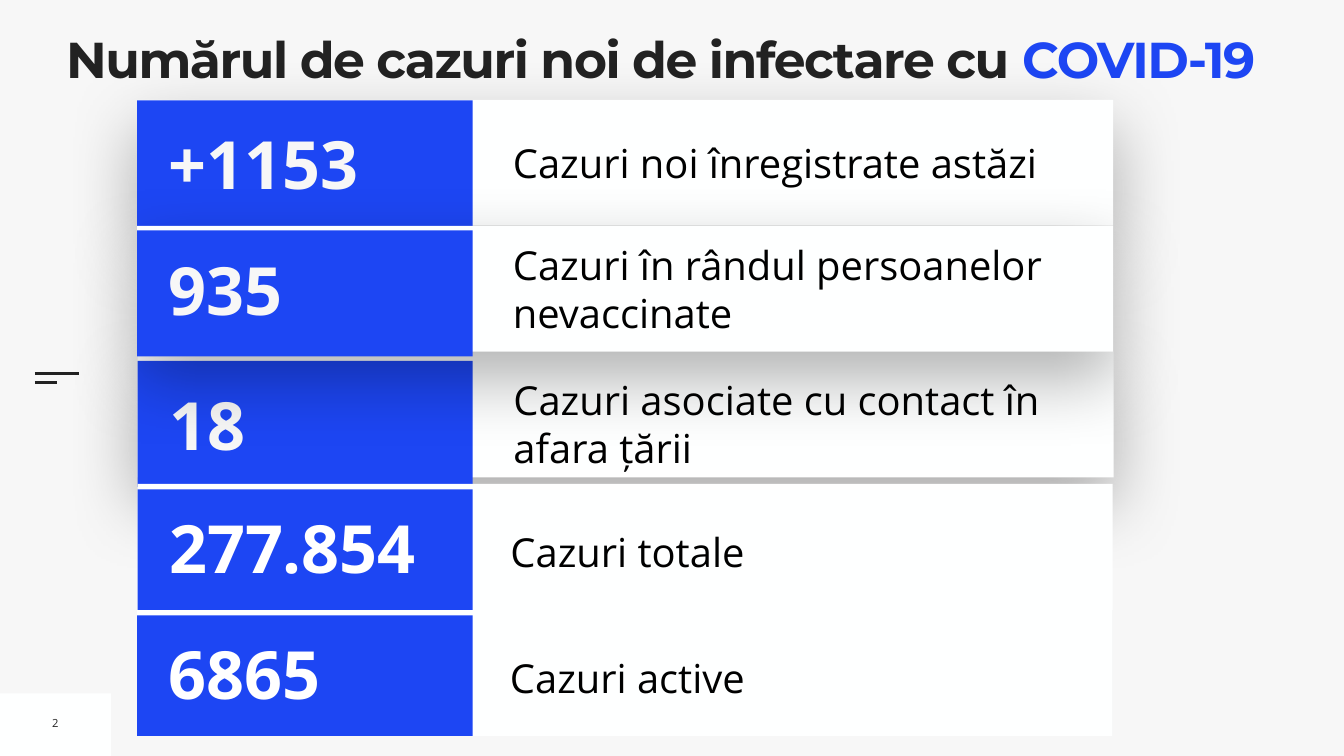
from lxml import etree
from pptx import Presentation, util as u
from pptx.dml.color import RGBColor
from pptx.enum import shapes, text
from pptx.oxml.ns import qn

PX = 9144  # EMU per px, 100 px to the inch
BLUE = RGBColor(0x1D, 0x46, 0xF3)
INK = RGBColor(0x22, 0x22, 0x22)
BLACK = RGBColor(0, 0, 0)
CARD = RGBColor(0xFE, 0xFF, 0xFF)
WHITE = RGBColor(0xFF, 0xFF, 0xFF)
PALE = RGBColor(0xF7, 0xF7, 0xF7)


def px(*lengths):
    return [n * PX for n in lengths]


def add_rect(parent, box, color):
    sp = parent.add_shape(shapes.MSO_SHAPE.RECTANGLE, *px(*box))
    sp.fill.solid()
    sp.fill.fore_color.rgb = color
    sp.line.fill.background()
    sp.shadow.inherit = False
    return sp


def add_shadow(sp):
    """Wide soft shadow falling straight down."""
    effects = sp._element.spPr.find(qn("a:effectLst"))
    shadow = etree.SubElement(effects, qn("a:outerShdw"), blurRad=str(u.Pt(100)),
                              dist=str(u.Pt(40)), dir="5400000", rotWithShape="0")
    color = etree.SubElement(shadow, qn("a:srgbClr"), val="000000")
    etree.SubElement(color, qn("a:alpha"), val="30000")


def add_text(parent, box, words, size, color, bold=False, inset=10, wrap=True):
    tf = parent.add_textbox(*px(*box)).text_frame
    tf.word_wrap = wrap
    tf.vertical_anchor = text.MSO_ANCHOR.MIDDLE
    tf.margin_left = tf.margin_right = tf.margin_top = tf.margin_bottom = inset * PX
    p = tf.paragraphs[0]
    p.text = words
    p.font.name, p.font.size, p.font.bold = "Open Sans", u.Pt(size), bold
    p.font.color.rgb = color
    return p


def add_line(parent, x, y, width):
    line = parent.add_connector(shapes.MSO_CONNECTOR.STRAIGHT, *px(x, y, x + width, y))
    line.line.color.rgb = INK
    line.line.width = u.Pt(3)
    etree.SubElement(line._element.spPr, qn("a:effectLst"))


def add_title(slide, box):
    title = slide.shapes.title
    title.left, title.top, title.width, title.height = px(*box)
    tf = title.text_frame
    tf.auto_size = text.MSO_AUTO_SIZE.NONE
    tf.vertical_anchor = text.MSO_ANCHOR.TOP
    tf.margin_left = tf.margin_right = tf.margin_top = tf.margin_bottom = 0
    p = tf.paragraphs[0]
    p.alignment = text.PP_ALIGN.LEFT
    p.line_spacing = 0.8
    for words, color in (("Numărul de cazuri noi de infectare cu ", INK), ("COVID-19", BLUE)):
        r = p.add_run()
        r.text = words
        r.font.name, r.font.size, r.font.bold = "Montserrat", u.Pt(72), True
        r.font.color.rgb = color
        r._r.get_or_add_rPr().set("spc", "-200")


def add_margin(slide):
    """Page number and the short rules at the left edge."""
    add_rect(slide.shapes, (0, 1376, 220, 124), CARD)
    add_line(slide.shapes, 69, 741, 88)
    add_line(slide.shapes, 69, 759, 44)
    p = add_text(slide.shapes, (93, 1409, 34, 51), "2", 16, INK, wrap=False)
    p.alignment = text.PP_ALIGN.CENTER


def add_case_row(slide, box, number, label, blue_drop, blue_height, number_drop,
                 label_drop, label_height):
    """White card with a blue number cell; drops are measured from the card top."""
    x, y, width, height = box
    row = slide.shapes.add_group_shape().shapes
    card = add_rect(row, box, CARD)
    is_total = blue_height < height
    if is_total:
        p = add_text(row, (x + 740, y + label_drop, 1158, label_height), label, 57, BLACK, inset=0)
        p.line_spacing = 1.3
        p.space_before = u.Pt(20)
    else:
        add_shadow(card)
        add_text(row, (x + 736, y + label_drop, 1176, label_height), label, 57, BLACK)
    add_rect(row, (x, y + blue_drop, 938 - x, blue_height), BLUE)
    add_text(row, (x + 53, y + number_drop, 603, 180), number, 95,
             WHITE if is_total else PALE, bold=True)


# Back to front, as the shadows overlap the neighbouring rows
ROWS = [
    ((272, 1210, 1935, 250), "6865", "Cazuri active", 11, 239, 35, 58, 125),
    ((272, 198, 1937, 250), "+1153", "Cazuri noi înregistrate astăzi", 1, 250, 35, 67, 116),
    ((273, 697, 1937, 250), "18", "Cazuri asociate cu contact în afara țării", 19, 250, 54, 37, 212),
    ((272, 448, 1937, 250), "935", "Cazuri în rândul persoanelor nevaccinate", 9, 250, 35, 19, 212),
    ((273, 960, 1935, 250), "277.854", "Cazuri totale", 11, 239, 35, 64, 112),
]


def main():
    prs = Presentation()
    prs.slide_width, prs.slide_height = px(2667, 1500)
    slide = prs.slides.add_slide(prs.slide_layouts[5])
    slide.background.fill.solid()
    slide.background.fill.fore_color.rgb = PALE
    add_margin(slide)
    add_title(slide, (131, 78, 2394, 158))
    for row in ROWS:
        add_case_row(slide, *row)
    prs.save("out.pptx")


if __name__ == "__main__":
    main()
